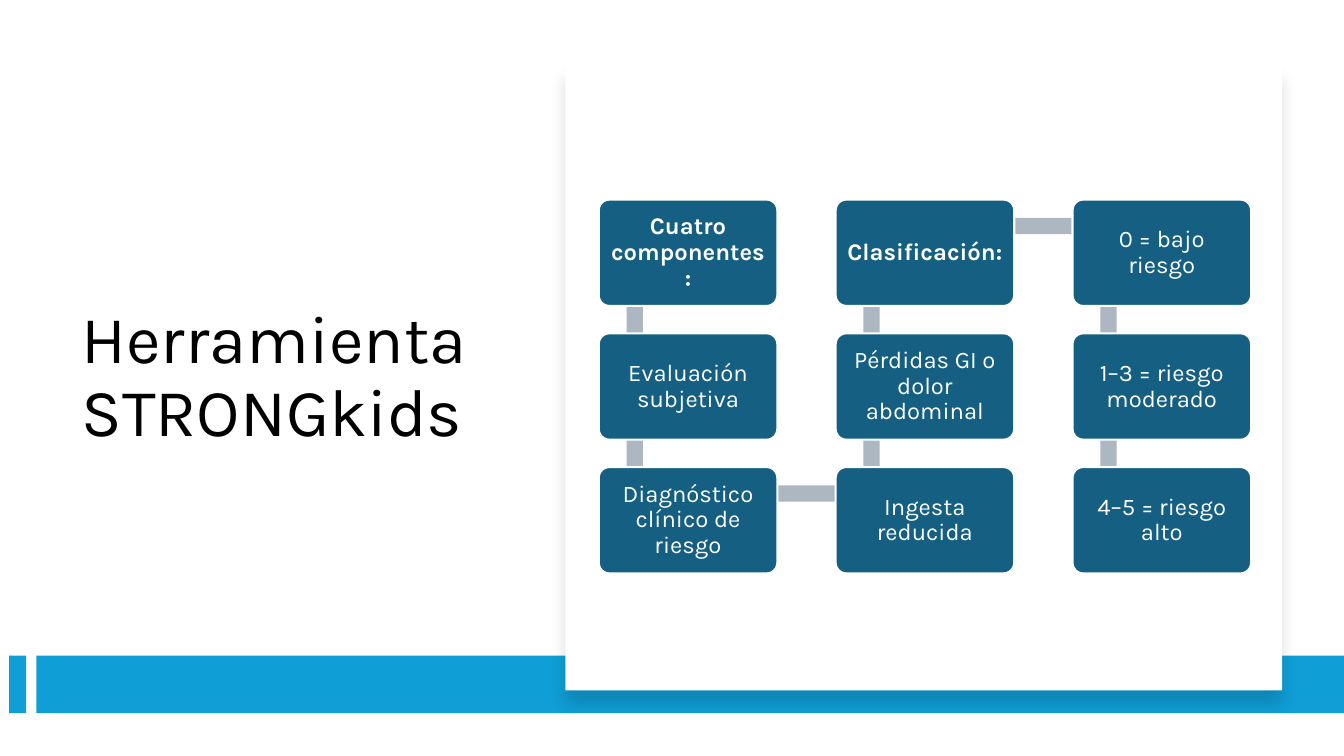
from lxml import etree
from pptx import Presentation
from pptx.dml.color import RGBColor
from pptx.enum import shapes, text
from pptx.oxml import ns
from pptx.util import Cm, Pt

BLACK = RGBColor(0x00, 0x00, 0x00)
WHITE = RGBColor(0xFF, 0xFF, 0xFF)
SKY = RGBColor(0x0F, 0x9E, 0xD5)
TEAL = RGBColor(0x15, 0x60, 0x82)
GREY = RGBColor(0xAC, 0xB7, 0xC1)
FONT = "Karla"

COLUMNS = [
    ["Cuatro componentes:", "Evaluación subjetiva", "Diagnóstico clínico de riesgo"],
    ["Clasificación:", "Pérdidas GI o dolor abdominal", "Ingesta reducida"],
    ["0 = bajo riesgo", "1–3 = riesgo moderado", "4–5 = riesgo alto"],
]
GRID_LEFT, GRID_TOP = 15.09, 5.03
COLUMN_STEP, ROW_STEP = 5.97, 3.37
BOX_WIDTH, BOX_HEIGHT = 4.5, 2.68
LINK_WIDTH = 0.41


def add_block(page, kind, left, top, width, height, color):
    block = page.shapes.add_shape(kind, Cm(left), Cm(top), Cm(width), Cm(height))
    block.shadow.inherit = False
    block.fill.solid()
    block.fill.fore_color.rgb = color
    block.line.fill.background()
    return block


def write(shape, words, size, color, align):
    frame = shape.text_frame
    frame.word_wrap = True
    frame.auto_size = text.MSO_AUTO_SIZE.NONE
    frame.vertical_anchor = text.MSO_ANCHOR.MIDDLE
    frame.text = words
    para = frame.paragraphs[0]
    para.alignment = align
    para.line_spacing = 0.9
    para.font.name = FONT
    para.font.size = Pt(size)
    para.font.color.rgb = color
    return frame


deck = Presentation()
deck.slide_width, deck.slide_height = Cm(33.87), Cm(19.05)
page = deck.slides.add_slide(deck.slide_layouts[5])
RECT = shapes.MSO_SHAPE.RECTANGLE
ROUNDED = shapes.MSO_SHAPE.ROUNDED_RECTANGLE

title = page.shapes.title
title.left, title.top, title.width, title.height = Cm(1.8), Cm(3.05), Cm(10.54), Cm(12.95)
write(title, "Herramienta STRONGkids", 48, BLACK, text.PP_ALIGN.LEFT)

for left, width in [(0.23, 0.43), (0.92, 32.95)]:
    add_block(page, RECT, left, 16.52, width, 1.45, SKY)

panel = add_block(page, RECT, 14.25, 1.63, 18.06, 15.77, WHITE)
effects = panel._element.spPr.find(ns.qn("a:effectLst"))
shadow = etree.SubElement(
    effects, ns.qn("a:outerShdw"), blurRad=str(Pt(11)), dist=str(Pt(10)),
    dir="5400000", algn="t", rotWithShape="0")
shade = etree.SubElement(shadow, ns.qn("a:srgbClr"), val=str(BLACK))
etree.SubElement(shade, ns.qn("a:alpha"), val="15000")

last_row = len(COLUMNS[0]) - 1
for column in range(len(COLUMNS)):
    left = GRID_LEFT + column * COLUMN_STEP
    for row in range(last_row):
        top = GRID_TOP + row * ROW_STEP
        add_block(page, RECT, left + 0.7, top + 0.67, LINK_WIDTH, 3.33, GREY)

for column, row in [(0, last_row), (1, 0)]:
    left = GRID_LEFT + column * COLUMN_STEP
    top = GRID_TOP + row * ROW_STEP
    add_block(page, RECT, left + 0.94, top + 0.46, 5.94, LINK_WIDTH, GREY)

for column, labels in enumerate(COLUMNS):
    for row, label in enumerate(labels):
        left = GRID_LEFT + column * COLUMN_STEP
        top = GRID_TOP + row * ROW_STEP
        box = add_block(page, ROUNDED, left, top, BOX_WIDTH, BOX_HEIGHT, TEAL)
        box.adjustments[0] = 0.1
        box.line.color.rgb = WHITE
        box.line.width = Pt(1.5)
        frame = write(box, label, 17, WHITE, text.PP_ALIGN.CENTER)
        frame.margin_left = frame.margin_right = Cm(0.18)
        frame.margin_top = frame.margin_bottom = Cm(0.18)
        frame.paragraphs[0].font.bold = label.endswith(":")

deck.save("out.pptx")
